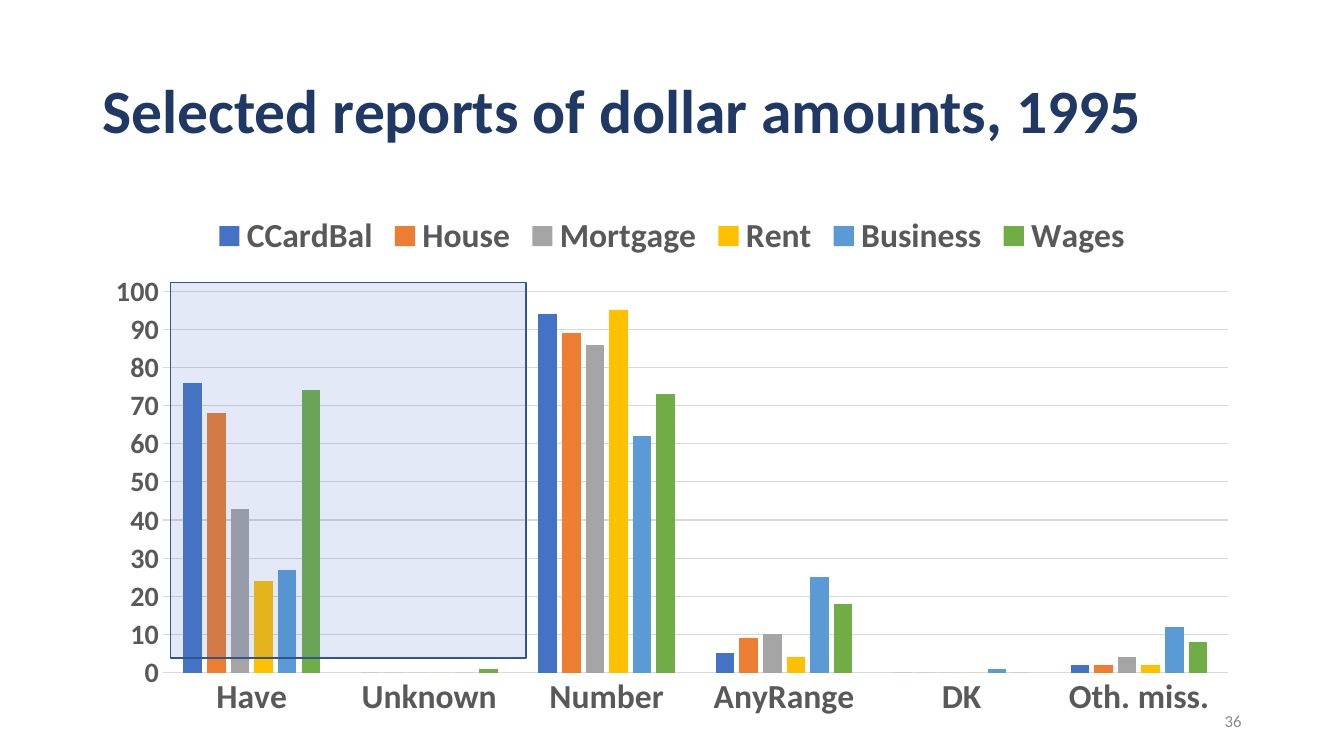
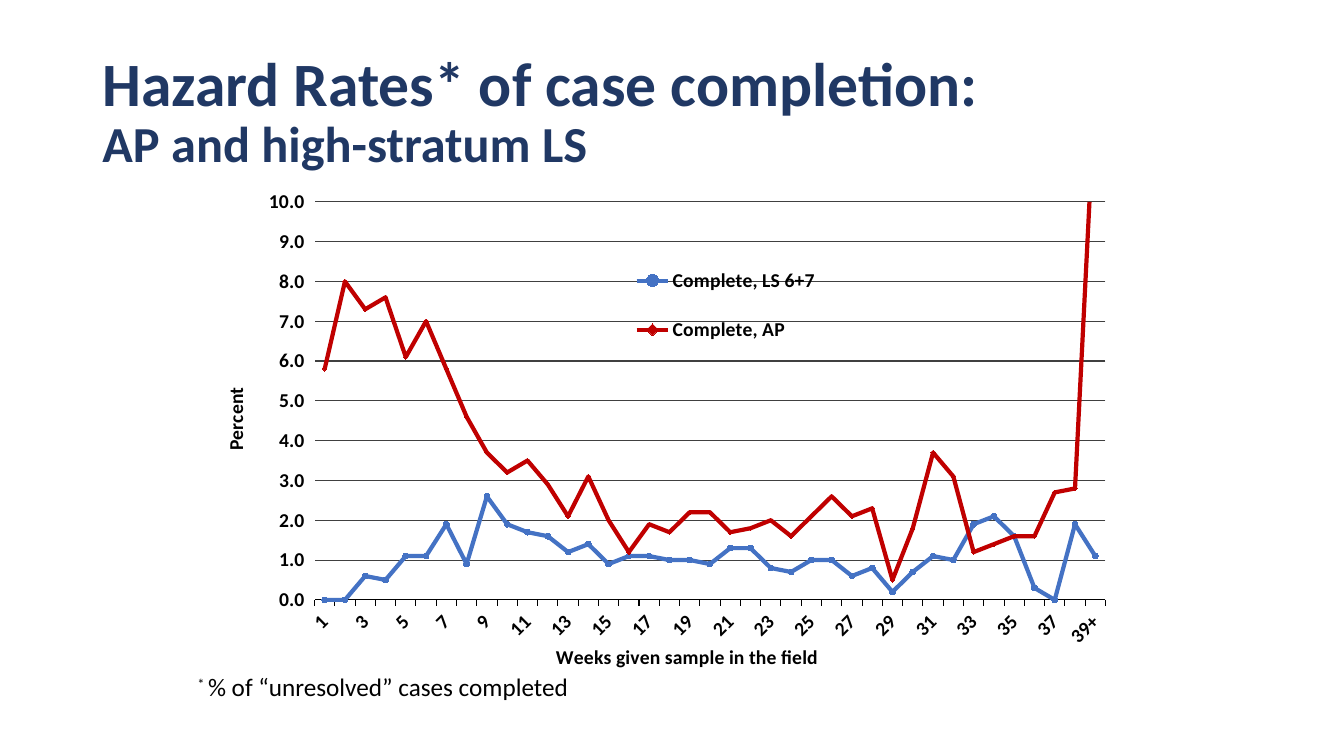
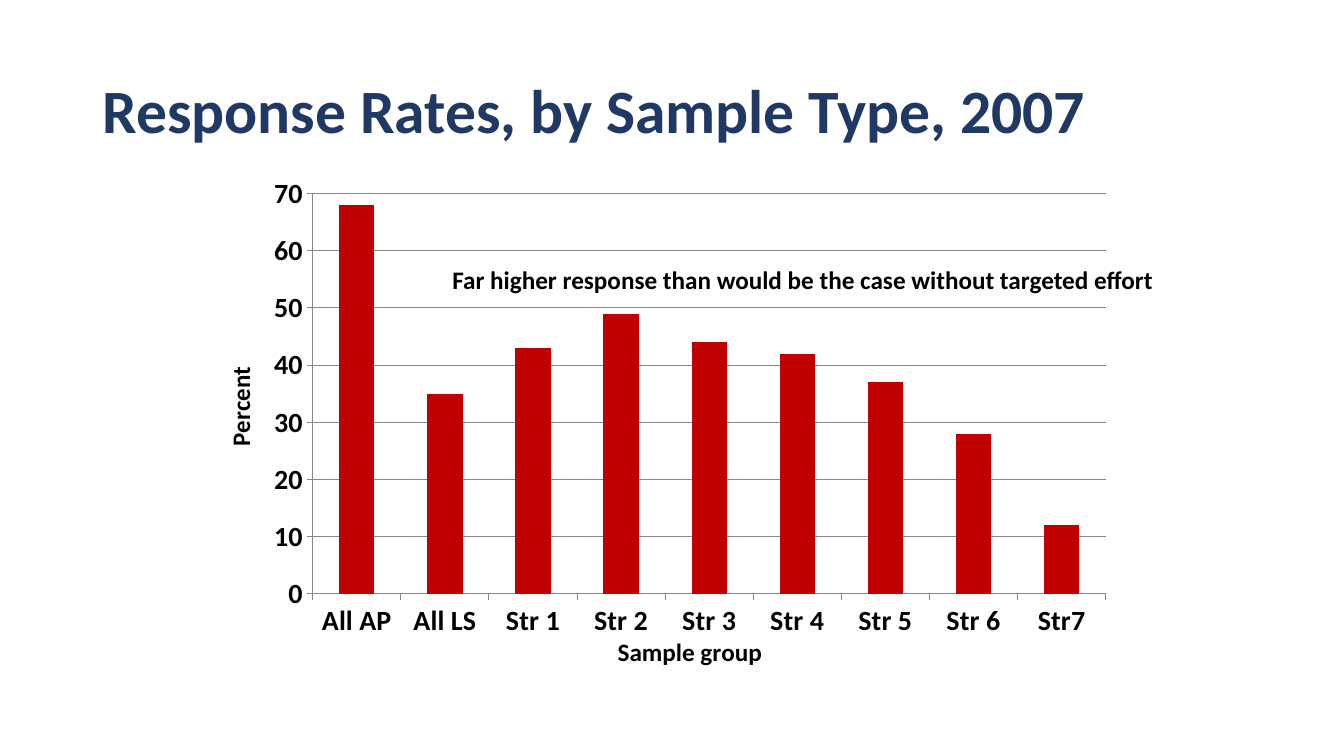
import dataclasses

import lxml.etree
import pptx
import pptx.chart.data
import pptx.dml.color
import pptx.enum.chart
import pptx.enum.shapes
import pptx.enum.text
import pptx.oxml.ns
import pptx.util

Pt = pptx.util.Pt
qn = pptx.oxml.ns.qn
CHART_TYPE = pptx.enum.chart.XL_CHART_TYPE
TICK = pptx.enum.chart.XL_TICK_MARK
MARKER = pptx.enum.chart.XL_MARKER_STYLE
ALIGN = pptx.enum.text.PP_ALIGN
ANCHOR = pptx.enum.text.MSO_ANCHOR


@dataclasses.dataclass(frozen=True)
class Theme:
    font: str = "Calibri"
    navy: str = "203864"
    blue: str = "4472C4"
    blue_edge: str = "325491"
    orange: str = "ED7D31"
    silver: str = "A5A5A5"
    gold: str = "FFC000"
    sky: str = "5B9BD5"
    green: str = "70AD47"
    red: str = "C00000"
    black: str = "000000"
    white: str = "FFFFFF"
    label_gray: str = "595959"
    number_gray: str = "8C8C8C"
    pale_grid: str = "D9D9D9"
    mid_grid: str = "868686"
    dark_grid: str = "404040"
    title_size: int = 44
    subtitle_size: int = 36
    large_size: int = 24
    axis_size: int = 20
    note_size: int = 18
    small_size: int = 14
    number_size: int = 12


THEME = Theme()
TITLE_BOX = (66, 28.8, 828, 104.4)
WIDE_CHART_BOX = (66, 144, 828, 376.5)
CHART_BOX = (156, 126, 648, 356.4)


def points(values):
    return [Pt(value) for value in values]


def rgb(color):
    return pptx.dml.color.RGBColor.from_string(color)


def style_font(font, size, color=THEME.black, bold=False):
    font.name = THEME.font
    font.size = Pt(size)
    font.bold = bold
    font.color.rgb = rgb(color)


def style_line(line, color, width=0.75):
    if color is None:
        line.fill.background()
    else:
        line.color.rgb = rgb(color)
        line.width = Pt(width)


def add_run(para, text, size, color=THEME.black, bold=False):
    span = para.add_run()
    span.text = text
    style_font(span.font, size, color, bold)
    return span


def add_titled_page(deck, title, subtitle=None):
    page = deck.slides.add_slide(deck.slide_layouts[5])
    box = page.shapes.title
    box.left, box.top, box.width, box.height = points(TITLE_BOX)
    frame = box.text_frame
    frame.word_wrap = True
    frame.auto_size = pptx.enum.text.MSO_AUTO_SIZE.NONE
    frame.vertical_anchor = ANCHOR.MIDDLE
    para = frame.paragraphs[0]
    para.alignment = ALIGN.LEFT
    para.line_spacing = 0.9
    add_run(para, title, THEME.title_size, THEME.navy, True)
    if subtitle:
        para.add_line_break()
        add_run(para, subtitle, THEME.subtitle_size, THEME.navy, True)
    return page


def add_text_box(page, bounds, align=ALIGN.LEFT, anchor=ANCHOR.TOP):
    box = page.shapes.add_textbox(*points(bounds))
    box.text_frame.word_wrap = False
    box.text_frame.vertical_anchor = anchor
    para = box.text_frame.paragraphs[0]
    para.alignment = align
    return para


def add_highlight(page, bounds, color, edge, opacity):
    box = page.shapes.add_shape(
        pptx.enum.shapes.MSO_SHAPE.RECTANGLE, *points(bounds))
    box.shadow.inherit = False
    box.fill.solid()
    box.fill.fore_color.rgb = rgb(color)
    style_line(box.line, edge, 1)
    tint = box._element.spPr.find(qn("a:solidFill")).find(qn("a:srgbClr"))
    lxml.etree.SubElement(tint, qn("a:alpha"), val=str(opacity * 1000))


def set_layout(parent, chart_box, area, inner=False):
    old = parent.find(qn("c:layout"))
    if old is not None:
        parent.remove(old)
    layout = lxml.etree.Element(qn("c:layout"))
    manual = lxml.etree.SubElement(layout, qn("c:manualLayout"))
    if inner:
        lxml.etree.SubElement(manual, qn("c:layoutTarget"), val="inner")
    for name in ("xMode", "yMode"):
        lxml.etree.SubElement(manual, qn("c:" + name), val="edge")
    for name, length, whole in zip("xywh", area, chart_box[2:] * 2):
        lxml.etree.SubElement(manual, qn("c:" + name), val=str(length / whole))
    if inner:
        parent.insert(0, layout)
    else:
        parent.find(qn("c:legendPos")).addnext(layout)


def add_chart(page, kind, bounds, plot_area, categories, series):
    data = pptx.chart.data.CategoryChartData()
    data.categories = categories
    for name, values, color in series:
        data.add_series(name, values)
    chart = page.shapes.add_chart(kind, *points(bounds), data).chart
    chart.has_title = False
    chart.has_legend = False
    style_font(chart.font, THEME.small_size)
    chart.plots[0].vary_by_categories = False
    set_layout(chart._chartSpace.chart.plotArea, bounds, plot_area, inner=True)
    return chart


def fill_columns(chart, series, gap, overlap=0):
    chart.plots[0].gap_width = gap
    chart.plots[0].overlap = overlap
    for column, (name, values, color) in zip(chart.plots[0].series, series):
        column.format.fill.solid()
        column.format.fill.fore_color.rgb = rgb(color)
        column.invert_if_negative = False


def style_lines(chart, series, markers):
    rows = zip(chart.plots[0].series, series, markers)
    for curve, (name, values, color), (symbol, size) in rows:
        curve.smooth = False
        style_line(curve.format.line, color, 3)
        curve.marker.style = symbol
        curve.marker.size = size
        curve.marker.format.fill.solid()
        curve.marker.format.fill.fore_color.rgb = rgb(color)
        style_line(curve.marker.format.line, color)


def style_axis(axis, size, color, line, tick=TICK.OUTSIDE, title=None,
               title_size=None):
    axis.major_tick_mark = tick
    axis.minor_tick_mark = TICK.NONE
    style_font(axis.tick_labels.font, size, color, True)
    style_line(axis.format.line, line)
    if title:
        para = axis.axis_title.text_frame.paragraphs[0]
        add_run(para, title, title_size, THEME.black, True)


def scale_axis(axis, maximum, step, grid, number_format="0"):
    axis.minimum_scale = 0
    axis.maximum_scale = maximum
    axis.major_unit = step
    axis.has_major_gridlines = True
    style_line(axis.major_gridlines.format.line, grid)
    axis.tick_labels.number_format = number_format
    axis.tick_labels.number_format_is_linked = False


def thin_labels(axis, skip, degrees):
    element = axis._element
    element.find(qn("c:txPr")).find(qn("a:bodyPr")).set(
        "rot", str(degrees * 60000))
    mark = lxml.etree.Element(qn("c:tickLblSkip"), val=str(skip))
    element.find(qn("c:noMultiLvlLbl")).addprevious(mark)


def add_legend(chart, position, size, color, overlay=False):
    chart.has_legend = True
    chart.legend.position = position
    chart.legend.include_in_layout = overlay
    style_font(chart.legend.font, size, color, True)
    return chart.legend


def build_dollar_page(deck):
    page = add_titled_page(deck, "Selected reports of dollar amounts, 1995")
    number = add_text_box(page, (678, 500.4, 216, 28.8), ALIGN.RIGHT, ANCHOR.MIDDLE)
    add_run(number, "36", THEME.number_size, THEME.number_gray)
    categories = ["Have", "Unknown", "Number", "AnyRange", "DK", "Oth. miss."]
    series = [
        ("CCardBal", (76, 0, 94, 5, 0, 2), THEME.blue),
        ("House", (68, 0, 89, 9, 0, 2), THEME.orange),
        ("Mortgage", (43, 0, 86, 10, 0, 4), THEME.silver),
        ("Rent", (24, 0, 95, 4, 0, 2), THEME.gold),
        ("Business", (27, 0, 62, 25, 1, 12), THEME.sky),
        ("Wages", (74, 1, 73, 18, 0, 8), THEME.green),
    ]
    chart = add_chart(page, CHART_TYPE.COLUMN_CLUSTERED, WIDE_CHART_BOX,
                      (50.5, 64, 760.5, 272.5), categories, series)
    fill_columns(chart, series, 219, -27)
    style_axis(chart.category_axis, THEME.large_size, THEME.label_gray,
               THEME.pale_grid, TICK.NONE)
    style_axis(chart.value_axis, THEME.axis_size, THEME.label_gray, None, TICK.NONE)
    scale_axis(chart.value_axis, 100, 10, THEME.pale_grid)
    add_legend(chart, pptx.enum.chart.XL_LEGEND_POSITION.TOP,
               THEME.large_size, THEME.label_gray)
    add_highlight(page, (121.7, 201.6, 254.2, 268.5), THEME.blue, THEME.blue_edge, 15)


def build_hazard_page(deck):
    page = add_titled_page(deck, "Hazard Rates* of case completion:",
                           "AP and high-stratum LS")
    categories = [str(week) for week in range(1, 39)] + ["39+"]
    series = [
        ("Complete, LS 6+7",
         (0, 0, 0.6, 0.5, 1.1, 1.1, 1.9, 0.9, 2.6, 1.9, 1.7, 1.6, 1.2,
          1.4, 0.9, 1.1, 1.1, 1, 1, 0.9, 1.3, 1.3, 0.8, 0.7, 1, 1,
          0.6, 0.8, 0.2, 0.7, 1.1, 1, 1.9, 2.1, 1.6, 0.3, 0, 1.9, 1.1),
         THEME.blue),
        ("Complete, AP",
         (5.8, 8, 7.3, 7.6, 6.1, 7, 5.8, 4.6, 3.7, 3.2, 3.5, 2.9, 2.1,
          3.1, 2, 1.2, 1.9, 1.7, 2.2, 2.2, 1.7, 1.8, 2, 1.6, 2.1, 2.6,
          2.1, 2.3, 0.5, 1.8, 3.7, 3.1, 1.2, 1.4, 1.6, 1.6, 2.7, 2.8, 12.9),
         THEME.red),
    ]
    chart = add_chart(page, CHART_TYPE.LINE_MARKERS, CHART_BOX,
                      (68.7, 18.2, 565, 284.4), categories, series)
    style_lines(chart, series, [(MARKER.CIRCLE, 4), (MARKER.DIAMOND, 3)])
    size = THEME.small_size
    style_axis(chart.category_axis, size, THEME.black, THEME.black,
               title="Weeks given sample in the field", title_size=size)
    thin_labels(chart.category_axis, 2, -45)
    style_axis(chart.value_axis, size, THEME.black, THEME.white,
               title="Percent", title_size=size)
    scale_axis(chart.value_axis, 10, 1, THEME.dark_grid, "0.0")
    legend = add_legend(chart, pptx.enum.chart.XL_LEGEND_POSITION.RIGHT,
                        size, THEME.black, True)
    set_layout(legend._element, CHART_BOX, (290, 48, 145, 88))
    note = add_text_box(page, (134, 476, 288, 29))
    star = add_run(note, "* ", THEME.note_size)
    star.font._element.set("baseline", "30000")
    add_run(note, "% of “unresolved” cases completed", THEME.note_size)


def build_response_page(deck):
    page = add_titled_page(deck, "Response Rates, by Sample Type, 2007")
    categories = ["All AP", "All LS", "Str 1", "Str 2", "Str 3", "Str 4",
                  "Str 5", "Str 6", "Str7"]
    series = [("Series 1", (68, 35, 43, 49, 44, 42, 37, 28, 12), THEME.red)]
    chart = add_chart(page, CHART_TYPE.COLUMN_CLUSTERED, CHART_BOX,
                      (67.4, 8.6, 566.4, 289), categories, series)
    fill_columns(chart, series, 150)
    for axis, title in ((chart.category_axis, "Sample group"),
                        (chart.value_axis, "Percent")):
        style_axis(axis, THEME.axis_size, THEME.black, THEME.mid_grid,
                   title=title, title_size=THEME.note_size)
    scale_axis(chart.value_axis, 70, 10, THEME.mid_grid)
    note = add_text_box(page, (316, 185, 520, 29))
    add_run(note, "Far higher response than would be the case without targeted effort",
            THEME.note_size, THEME.black, True)


def main():
    deck = pptx.Presentation()
    deck.slide_width, deck.slide_height = points((960, 540))
    build_dollar_page(deck)
    build_hazard_page(deck)
    build_response_page(deck)
    deck.save("out.pptx")


if __name__ == "__main__":
    main()
